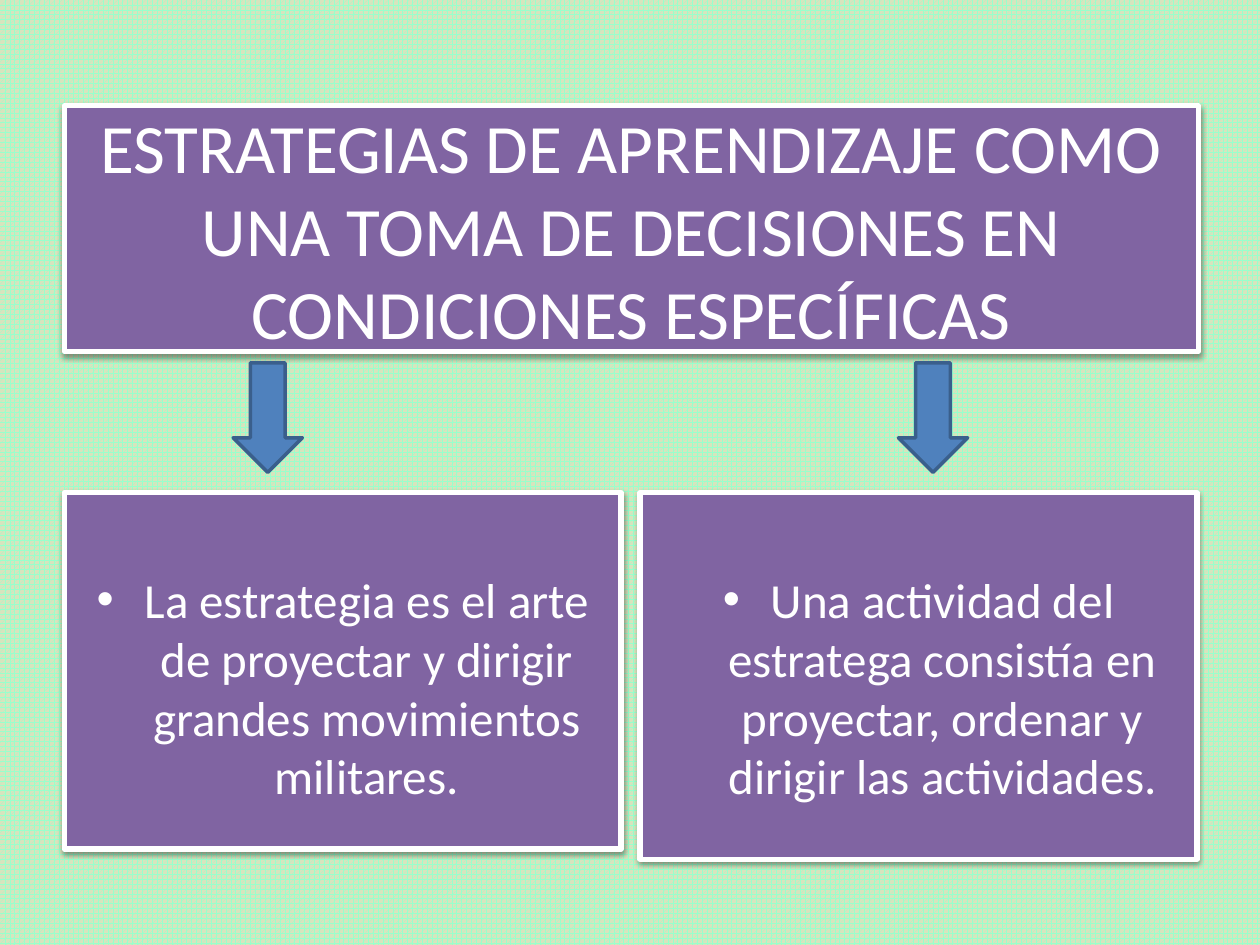
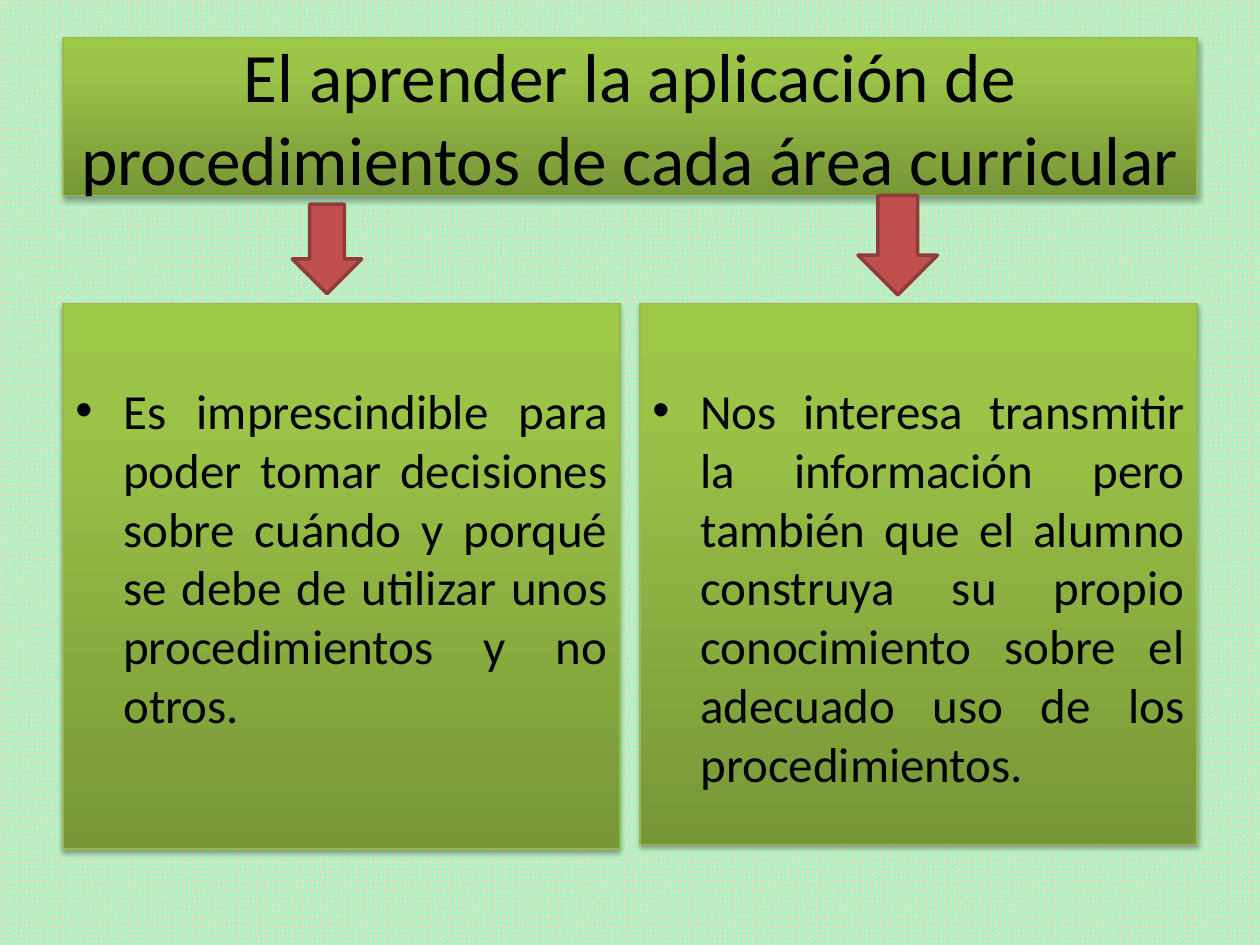
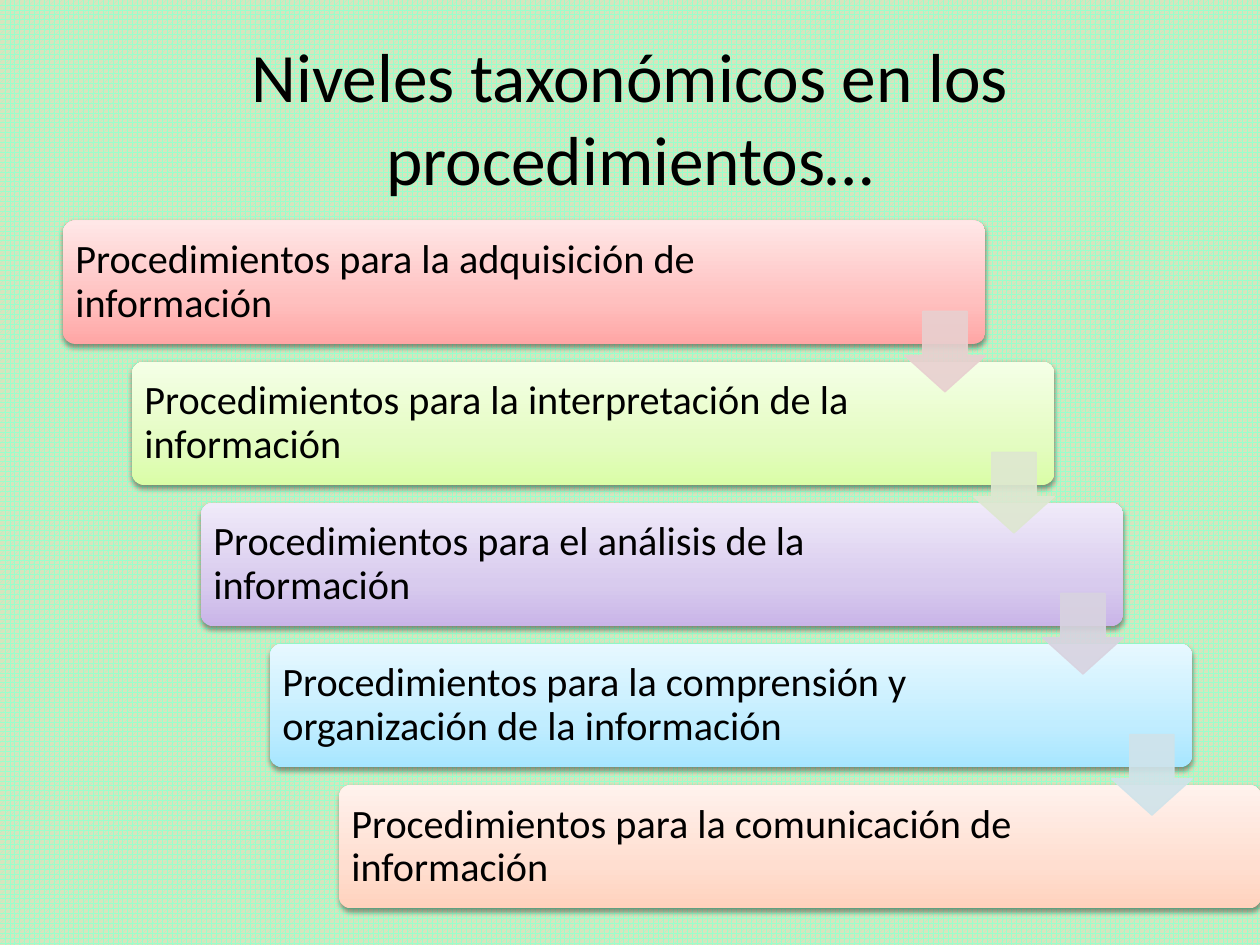
"""Build three slides on learning strategies and procedures."""
from dataclasses import dataclass

import lxml.etree
import pptx
import pptx.dml.color
import pptx.enum.dml
import pptx.enum.shapes
import pptx.enum.text
import pptx.oxml.ns
import pptx.util

Inches = pptx.util.Inches
Pt = pptx.util.Pt
qn = pptx.oxml.ns.qn
ALIGN = pptx.enum.text.PP_ALIGN
ANCHOR = pptx.enum.text.MSO_ANCHOR
SHAPE = pptx.enum.shapes.MSO_SHAPE

FONT = "Calibri"
BLACK, WHITE = "000000", "FFFFFF"
PATTERN_FRONT, PATTERN_BACK = "99FFCC", "D7E4BD"
TITLE_SIZE, BODY_SIZE, STEP_SIZE = 39.6, 28, 23
TITLE_BOX = (0.5, 0.3, 9, 1.25)


@dataclass(frozen=True)
class Shadow:
    alpha: int
    blur: float
    distance: float


@dataclass(frozen=True)
class Style:
    stops: tuple[tuple[int, str], ...]
    shadow: Shadow
    line: str | None = None
    line_width: float = 0.75
    text: str = BLACK
    align: ALIGN = ALIGN.LEFT


@dataclass(frozen=True)
class Panel:
    box: tuple[float, float, float, float]
    text: str


@dataclass(frozen=True)
class Arrow:
    box: tuple[float, float, float, float]
    fill: str
    line: str
    line_width: float = 2
    alpha: int = 100
    adjustments: tuple[float, float] = (0.5, 0.5)


@dataclass(frozen=True)
class Step:
    text: str
    stops: tuple[tuple[int, str], ...]
    arrow: str | None


SOFT = Shadow(38, 3.1, 1.6)
PURPLE = Style(((0, "8064A2"),), SOFT, WHITE, 3, WHITE, ALIGN.CENTER)
GREEN = Style(((0, "779737"), (80, "9BC348"), (100, "9DC746")),
              Shadow(35, 3.1, 1.8), "98B955", align=ALIGN.JUSTIFY)

STEPS = [
    Step("Procedimientos para la adquisición de información",
         ((0, "FFA6A5"), (35, "FFC0BF"), (100, "FFE7E7")), "E8D0D0"),
    Step("Procedimientos para la interpretación de la información",
         ((0, "DAFDA7"), (35, "E4FCC2"), (100, "F5FFE7")), "DEE7D1"),
    Step("Procedimientos para el análisis de la información",
         ((0, "C9B5E8"), (35, "D8CBEE"), (100, "F0EAF9")), "D8D3E0"),
    Step("Procedimientos para la comprensión y organización de la información",
         ((0, "A7E6FF"), (35, "C1EDFF"), (100, "E7F8FF")), "D0E3EA"),
    Step("Procedimientos para la comunicación de información",
         ((0, "FFD2BD"), (35, "FFDED0"), (100, "FFF2ED")), None),
]


def color(value: str) -> pptx.dml.color.RGBColor:
    """Turn a hex string into a colour."""
    return pptx.dml.color.RGBColor.from_string(value)


def add_color(parent, value: str, alpha: int = 100) -> None:
    """Append a colour element with its opacity in percent."""
    rgb = lxml.etree.SubElement(parent, qn("a:srgbClr"), val=value)
    if alpha < 100:
        lxml.etree.SubElement(rgb, qn("a:alpha"), val=str(alpha * 1000))


def place(shape, box: tuple[float, float, float, float]) -> None:
    """Set position and size in inches."""
    shape.left, shape.top, shape.width, shape.height = map(Inches, box)


def apply_style(shape, style: Style) -> None:
    """Give a shape its fill, line and shadow."""
    if len(style.stops) == 1:
        shape.fill.solid()
        shape.fill.fore_color.rgb = color(style.stops[0][1])
    else:
        shape.fill.gradient()
        shape.fill.gradient_angle = 90
        stop_list = shape._element.spPr.find(".//" + qn("a:gsLst"))
        stop_list.clear()
        for position, value in style.stops:
            stop = lxml.etree.SubElement(stop_list, qn("a:gs"), pos=str(position * 1000))
            add_color(stop, value)
    if style.line:
        shape.line.color.rgb = color(style.line)
        shape.line.width = Pt(style.line_width)
    else:
        shape.line.fill.background()
    shape.shadow.inherit = False
    outer = lxml.etree.SubElement(
        shape._element.spPr.find(qn("a:effectLst")), qn("a:outerShdw"),
        blurRad=str(Pt(style.shadow.blur)), dist=str(Pt(style.shadow.distance)),
        dir="5400000", rotWithShape="0")
    add_color(outer, BLACK, style.shadow.alpha)


def write(shape, text: str, size: float, text_color: str, align: ALIGN, anchor: ANCHOR):
    """Set one formatted paragraph and return it."""
    frame = shape.text_frame
    frame.text = text
    frame.word_wrap = True
    frame.auto_size = pptx.enum.text.MSO_AUTO_SIZE.NONE
    frame.vertical_anchor = anchor
    paragraph = frame.paragraphs[0]
    paragraph.alignment = align
    font = paragraph.runs[0].font
    font.name, font.size, font.color.rgb = FONT, Pt(size), color(text_color)
    return paragraph


def add_slide(deck, title: Panel, style: Style | None = None):
    """Add a patterned slide with its title."""
    slide = deck.slides.add_slide(deck.slide_layouts[5])
    backdrop = slide.background.fill
    backdrop.patterned()
    backdrop.pattern = pptx.enum.dml.MSO_PATTERN.SPHERE
    backdrop.fore_color.rgb = color(PATTERN_FRONT)
    backdrop.back_color.rgb = color(PATTERN_BACK)
    heading = slide.shapes.title
    place(heading, title.box)
    write(heading, title.text, TITLE_SIZE, style.text if style else BLACK,
          ALIGN.CENTER, ANCHOR.MIDDLE)
    if style:
        apply_style(heading, style)
    return slide


def add_panel(slide, panel: Panel, style: Style) -> None:
    """Add a filled panel with one bulleted paragraph."""
    shape = slide.shapes.add_shape(SHAPE.RECTANGLE, *map(Inches, panel.box))
    apply_style(shape, style)
    paragraph = write(shape, panel.text, BODY_SIZE, style.text, style.align, ANCHOR.TOP)
    shape.text_frame.margin_top = Inches(0.61)
    properties = paragraph._p.get_or_add_pPr()
    properties.set("marL", str(Inches(0.38)))
    properties.set("indent", str(Inches(-0.38)))
    lxml.etree.SubElement(properties, qn("a:buFont"), typeface="Arial")
    lxml.etree.SubElement(properties, qn("a:buChar"), char="•")


def add_arrow(slide, arrow: Arrow) -> None:
    """Add a block arrow pointing down."""
    shape = slide.shapes.add_shape(SHAPE.DOWN_ARROW, *map(Inches, arrow.box))
    for index, adjustment in enumerate(arrow.adjustments):
        shape.adjustments[index] = adjustment
    shape.shadow.inherit = False
    shape.fill.solid()
    shape.fill.fore_color.rgb = color(arrow.fill)
    shape.line.color.rgb = color(arrow.line)
    shape.line.width = Pt(arrow.line_width)
    if arrow.alpha < 100:
        for rgb in shape._element.spPr.iter(qn("a:srgbClr")):
            lxml.etree.SubElement(rgb, qn("a:alpha"), val=str(arrow.alpha * 1000))


def add_concept_slide(deck, title: Panel, panels: list[Panel], arrows: list[Arrow],
                      style: Style) -> None:
    """Add a slide whose title leads down to panels."""
    slide = add_slide(deck, title, style)
    for panel in panels:
        add_panel(slide, panel, style)
    for arrow in arrows:
        add_arrow(slide, arrow)


def add_staircase(slide, steps: list[Step]) -> None:
    """Add descending cards, then the arrows between them."""
    shift, drop = (2.69 - 0.5) / 4, 1.12
    for index, step in enumerate(steps):
        left, top = 0.5 + index * shift, 1.75 + index * drop
        card = slide.shapes.add_shape(
            SHAPE.ROUNDED_RECTANGLE, *map(Inches, (left, top, 7.32, 0.98)))
        card.adjustments[0] = 0.1
        apply_style(card, Style(step.stops, SOFT))
        label = slide.shapes.add_textbox(*map(Inches, (left, top, 6.13, 0.98)))
        paragraph = write(label, step.text, STEP_SIZE, BLACK, ALIGN.LEFT, ANCHOR.MIDDLE)
        paragraph.line_spacing = 0.9
        frame = label.text_frame
        frame.margin_left = frame.margin_right = Inches(0.1)
        frame.margin_top = frame.margin_bottom = Inches(0.1)
    for index, step in enumerate(steps):
        if step.arrow:
            box = (7.18 + index * shift, 2.47 + index * drop, 0.64, 0.64)
            add_arrow(slide, Arrow(box, step.arrow, step.arrow, 0.75, 90, (0.55, 0.45)))


def main() -> None:
    """Build and save the deck."""
    deck = pptx.Presentation()
    deck.slide_width, deck.slide_height = Inches(10), Inches(7.5)
    add_concept_slide(
        deck,
        Panel((0.51, 0.84, 9, 1.95), "ESTRATEGIAS DE APRENDIZAJE COMO UNA TOMA DE "
              "DECISIONES EN CONDICIONES ESPECÍFICAS"),
        [Panel((0.51, 3.91, 4.42, 2.83), "La estrategia es el arte de proyectar y "
               "dirigir grandes movimientos militares."),
         Panel((5.08, 3.91, 4.42, 2.91), "Una actividad del estratega consistía en "
               "proyectar, ordenar y dirigir las actividades.")],
        [Arrow((left, 2.88, 0.55, 0.87), "4F81BD", "3A5F8C") for left in (1.85, 7.13)],
        PURPLE)
    add_concept_slide(
        deck,
        Panel(TITLE_BOX, "El aprender la aplicación de procedimientos de cada área "
              "curricular"),
        [Panel((0.5, 2.41, 4.42, 4.33), "Es imprescindible para poder tomar decisiones "
               "sobre cuándo y porqué se debe de utilizar unos procedimientos y no otros."),
         Panel((5.08, 2.41, 4.42, 4.29), "Nos interesa transmitir la información pero "
               "también que el alumno construya su propio conocimiento sobre el adecuado "
               "uso de los procedimientos.")],
        [Arrow(box, "C0504D", "8E3B39")
         for box in ((2.32, 1.62, 0.55, 0.71), (6.81, 1.55, 0.63, 0.79))],
        GREEN)
    levels = add_slide(deck, Panel(TITLE_BOX, "Niveles taxonómicos en los procedimientos…"))
    add_staircase(levels, STEPS)
    deck.save("out.pptx")


if __name__ == "__main__":
    main()
